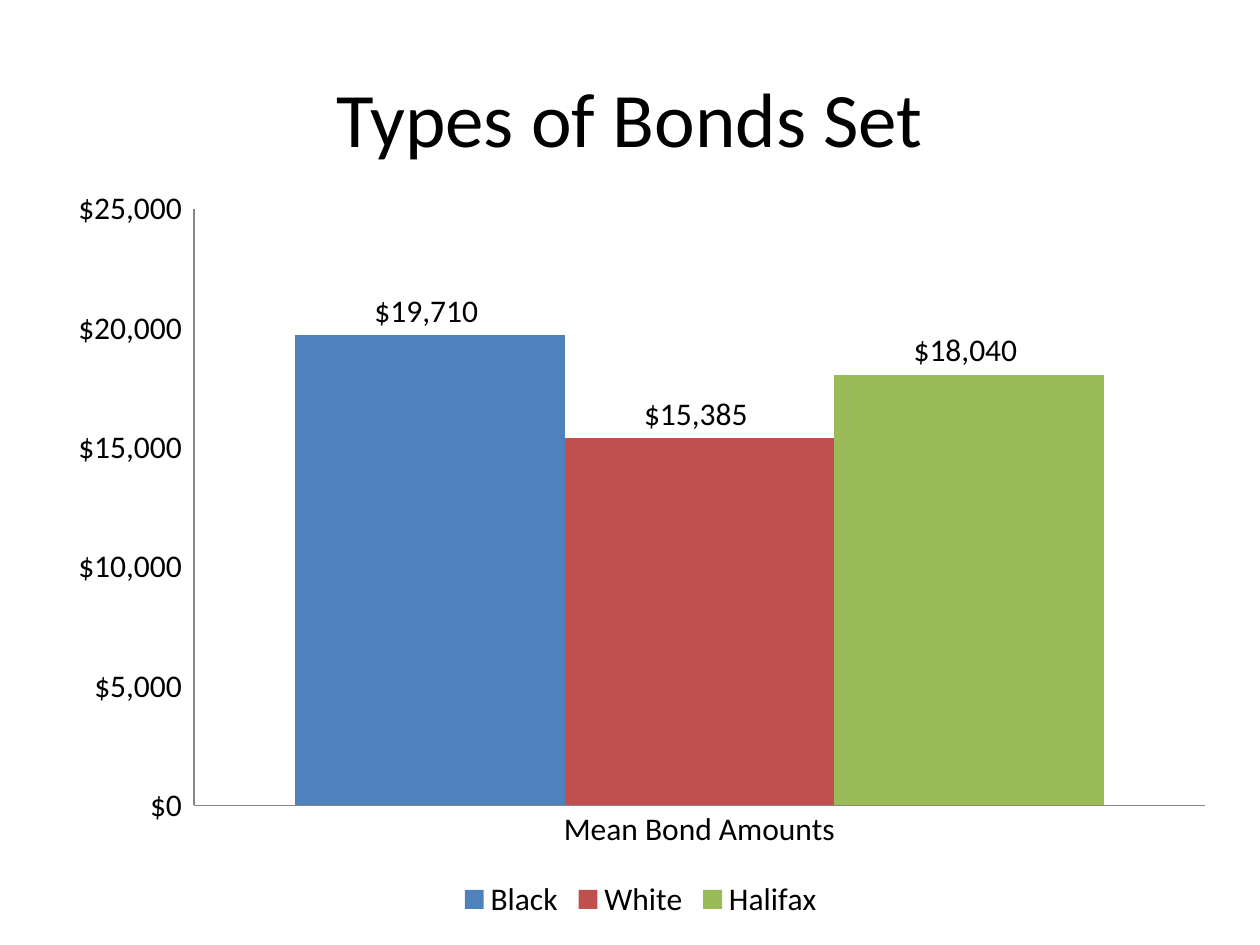
from dataclasses import dataclass
from typing import Any

from lxml import etree
from pptx import Presentation
from pptx import util as u
from pptx.chart.data import CategoryChartData
from pptx.dml.color import RGBColor
from pptx.enum import chart as ch
from pptx.enum import text

COLORS = {"text": "000000", "axis": "868686", "blue": "4F81BD",
          "red": "C0504D", "green": "9BBB59"}
FONT = "Calibri"
DOLLARS = '"$"#,##0_);[Red]\\("$"#,##0\\)'


@dataclass
class BondGroup:
    name: str
    mean_bond: int
    color: str


GROUPS = [
    BondGroup("Black", 19710, "blue"),
    BondGroup("White", 15385, "red"),
    BondGroup("Halifax", 18040, "green"),
]
# Inner plot area as fractions of the chart
PLOT_LAYOUT = {"x": 0.12, "y": 0.04, "w": 0.86, "h": 0.8}


def rgb(key: str) -> RGBColor:
    return RGBColor.from_string(COLORS[key])


def apply(target: Any, **values: Any) -> None:
    for name, value in values.items():
        setattr(target, name, value)


def style_font(font: Any, size: int) -> None:
    apply(font, name=FONT, size=u.Pt(size))
    font.color.rgb = rgb("text")


def place_plot(chart: Any) -> None:
    plot_area = chart.plots[0]._element.getparent()
    ns = etree.QName(plot_area).namespace
    for old in plot_area.findall(f"{{{ns}}}layout"):
        plot_area.remove(old)
    layout = etree.Element(f"{{{ns}}}layout")
    manual = etree.SubElement(layout, f"{{{ns}}}manualLayout")
    settings = {"layoutTarget": "inner", "xMode": "edge", "yMode": "edge", **PLOT_LAYOUT}
    for tag, value in settings.items():
        etree.SubElement(manual, f"{{{ns}}}{tag}", val=str(value))
    plot_area.insert(0, layout)


def add_title(slide: Any, wording: str) -> None:
    title = slide.shapes.add_textbox(u.Inches(0.5), u.Inches(0.3),
                                     u.Inches(9), u.Inches(1.25))
    apply(title.text_frame, word_wrap=True, vertical_anchor=text.MSO_ANCHOR.MIDDLE)
    heading = title.text_frame.paragraphs[0]
    heading.alignment = text.PP_ALIGN.CENTER
    run = heading.add_run()
    run.text = wording
    style_font(run.font, 44)


def add_bond_chart(slide: Any, groups: list[BondGroup]) -> None:
    bonds = CategoryChartData(number_format=DOLLARS)
    bonds.categories = ["Mean Bond Amounts"]
    for group in groups:
        bonds.add_series(group.name, [group.mean_bond])
    chart = slide.shapes.add_chart(
        ch.XL_CHART_TYPE.COLUMN_CLUSTERED, u.Inches(0.42), u.Inches(1.42),
        u.Inches(9.33), u.Inches(5.92), bonds).chart
    apply(chart, has_title=False, has_legend=True)
    style_font(chart.font, 18)
    apply(chart.legend, position=ch.XL_LEGEND_POSITION.BOTTOM, include_in_layout=False)

    # Axes
    for axis in (chart.category_axis, chart.value_axis):
        apply(axis, has_major_gridlines=False,
              major_tick_mark=ch.XL_TICK_MARK.NONE,
              minor_tick_mark=ch.XL_TICK_MARK.NONE)
        axis.format.line.color.rgb = rgb("axis")
        axis.format.line.width = u.Pt(0.75)
    apply(chart.value_axis, minimum_scale=0, maximum_scale=25000, major_unit=5000)
    apply(chart.value_axis.tick_labels, number_format=DOLLARS,
          number_format_is_linked=False)

    # Columns and their value labels
    plot = chart.plots[0]
    apply(plot, gap_width=75, overlap=0, vary_by_categories=False)
    for group, column in zip(groups, plot.series):
        column.format.fill.solid()
        column.format.fill.fore_color.rgb = rgb(group.color)
        apply(column.data_labels, show_value=True, number_format=DOLLARS,
              number_format_is_linked=False,
              position=ch.XL_LABEL_POSITION.OUTSIDE_END)
        style_font(column.data_labels.font, 18)
    place_plot(chart)


def main() -> None:
    deck = Presentation()
    apply(deck, slide_width=u.Inches(10), slide_height=u.Inches(7.5))
    slide = deck.slides.add_slide(deck.slide_layouts[6])
    add_title(slide, "Types of Bonds Set")
    add_bond_chart(slide, GROUPS)
    deck.save("out.pptx")


if __name__ == "__main__":
    main()
